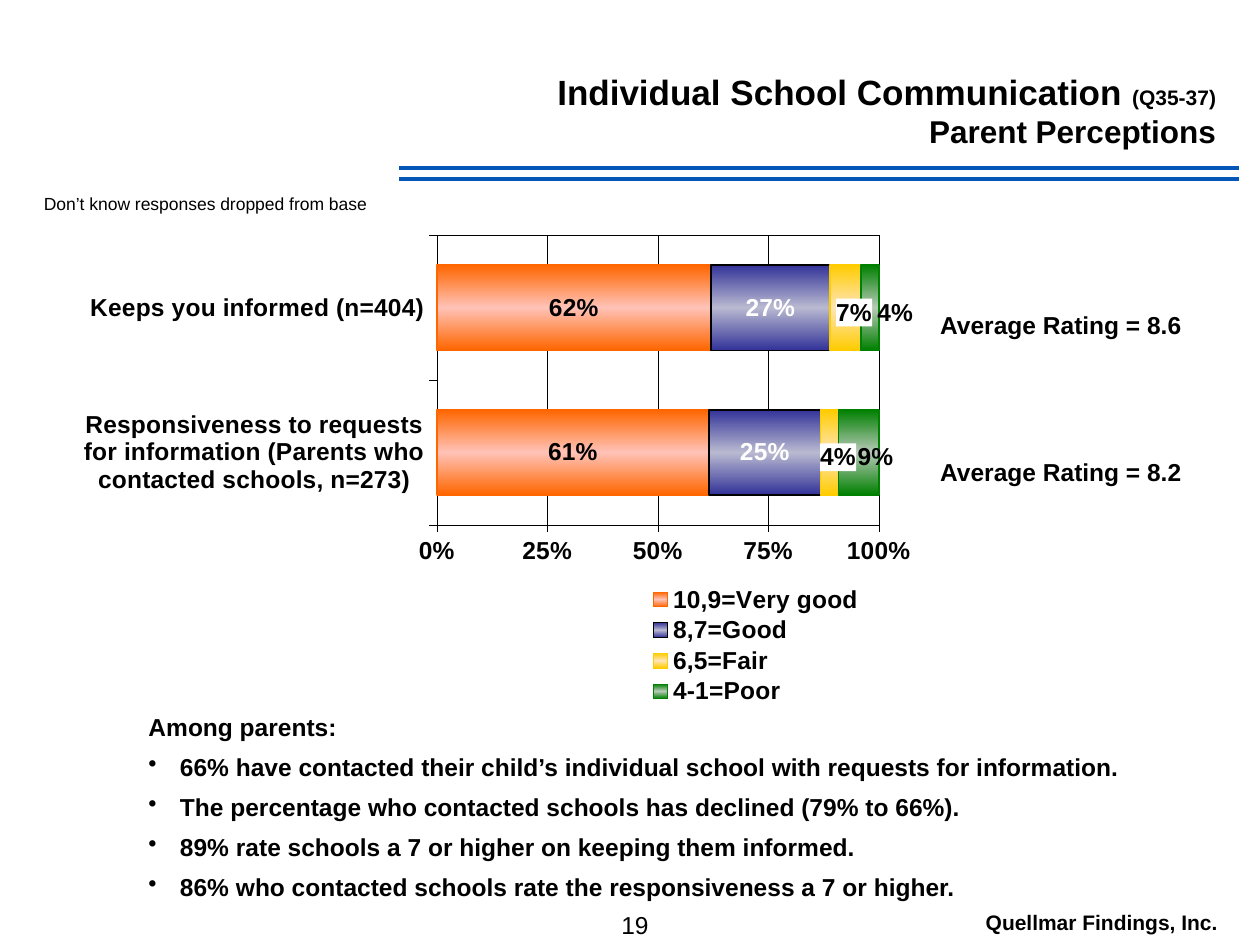
from lxml.etree import SubElement as Sub
from pptx import Presentation
from pptx.chart.data import CategoryChartData as Data
from pptx.dml.color import RGBColor as RGB
from pptx.enum.chart import XL_CHART_TYPE as Kind, XL_LEGEND_POSITION as Spot
from pptx.enum.chart import XL_TICK_MARK as Tick
from pptx.enum.shapes import MSO_CONNECTOR as Link
from pptx.enum.text import MSO_ANCHOR as Anchor, PP_ALIGN as Align
from pptx.oxml import parse_xml
from pptx.oxml.ns import nsdecls, qn
from pptx.util import Inches, Pt

# Content
TITLE = [[("Individual School Communication ", "head"), ("(Q35-37)", "small")],
         [("Parent Perceptions", "sub")]]
NOTE = "Don’t know responses dropped from base"
CATS = ["Responsiveness to requests for information (Parents who contacted schools, n=273)",
        "Keeps you informed (n=404)"]
RATES = ["Average Rating = 8.2", "Average Rating = 8.6"]
# name, values, fill, line, label colour, label shifts by category
SERIES = [
    ("10,9=Very good", (0.61, 0.62), "FF6600", "FF6600", "000000", ()),
    ("8,7=Good", (0.25, 0.27), "333399", "000000", "FFFFFF", ()),
    ("6,5=Fair", (0.04, 0.07), "FFCC00", "FFCC00", "000000", ((0.01, 0.01), (0.01, 0.01))),
    ("4-1=Poor", (0.09, 0.04), "008000", "008000", "000000", ((0.02, 0.01), (0.03, 0.01))),
]
BOXED = "6,5=Fair"
LEAD = "Among parents:"
POINTS = [
    "66% have contacted their child’s individual school with requests for information.",
    "The percentage who contacted schools has declined (79% to 66%).",
    "89% rate schools a 7 or higher on keeping them informed.",
    "86% who contacted schools rate the responsiveness a 7 or higher.",
]
PAGE, FIRM = "19", "Quellmar Findings, Inc."

THEME = {
    "font": "Arial", "ink": "000000", "paper": "FFFFFF", "rule": "0556B7",
    "head": 20, "sub": 18, "body": 14, "small": 12, "note": 10,
}


def style(font, size="body", bold=True, color=THEME["ink"]):
    font.name, font.size, font.bold = THEME["font"], Pt(THEME[size]), bold
    font.color.rgb = RGB.from_string(color)


def write(slide, text, at, size="body", bold=True, align=Align.LEFT,
          anchor=Anchor.TOP, gap=0, hang=0, dots=False):
    """Each paragraph is a string or a list of (text, size) runs."""
    frame = slide.shapes.add_textbox(*map(Inches, at)).text_frame
    frame.word_wrap, frame.vertical_anchor = True, anchor
    for n, item in enumerate([text] if isinstance(text, str) else text):
        par = frame.add_paragraph() if n else frame.paragraphs[0]
        par.alignment = align
        if n:
            par.space_before = Pt(gap)
        if dots and n:
            props = par._p.get_or_add_pPr()
            props.set("marL", str(Inches(hang)))
            props.set("indent", str(-Inches(hang)))
            Sub(props, qn("a:buChar"), char="•")
        for words, mark in [(item, size)] if isinstance(item, str) else item:
            run = par.add_run()
            run.text = words
            style(run.font, mark, bold)


def rule(slide, top):
    line = slide.shapes.add_connector(
        Link.STRAIGHT, Inches(3.17), Inches(top), Inches(9.83), Inches(top))
    line.line.color.rgb = RGB.from_string(THEME["rule"])
    line.line.width = Pt(2.25)
    Sub(line._element.spPr, qn("a:effectLst"))


def place(x, y, w=None, h=None, inner=False):
    """Manual chart layout; without a size, x and y are shifts."""
    rows = [("layoutTarget", "inner")] if inner else []
    if w:
        rows += [("xMode", "edge"), ("yMode", "edge")]
    rows += [("x", x), ("y", y)] + ([("w", w), ("h", h)] if w else [])
    body = "".join(f'<c:{k} val="{v}"/>' for k, v in rows)
    return parse_xml(f'<c:layout {nsdecls("c")}><c:manualLayout>{body}'
                     '</c:manualLayout></c:layout>')


def plain(line=None):
    edge = (f'<a:ln w="2700"><a:solidFill><a:srgbClr val="{line}"/></a:solidFill></a:ln>'
            if line else "")
    return parse_xml(f'<c:spPr {nsdecls("c", "a")}><a:solidFill><a:srgbClr '
                     f'val="{THEME["paper"]}"/></a:solidFill>{edge}</c:spPr>')


def shade(fill, color):
    """Vertical blend, lightest in the middle."""
    fill.gradient()
    fill.gradient_angle = 270
    stops = fill._xPr.find(qn("a:gradFill")).find(qn("a:gsLst"))
    for stop in list(stops):
        stops.remove(stop)
    for pos in (0, 50000, 100000):
        tone = Sub(Sub(stops, qn("a:gs"), pos=str(pos)), qn("a:srgbClr"), val=color)
        if pos == 50000:
            Sub(tone, qn("a:tint"), val="53000")


def hair(line, width=0.21, color=THEME["ink"]):
    line.color.rgb = RGB.from_string(color)
    line.width = Pt(width)


def graph(slide, at):
    data = Data(number_format="0%")
    data.categories = CATS
    for name, vals, *_ in SERIES:
        data.add_series(name, vals)
    chart = slide.shapes.add_chart(
        Kind.BAR_STACKED_100, *map(Inches, at), data).chart
    style(chart.font)
    chart.has_title = False

    # Axes and plot area
    cat, val = chart.category_axis, chart.value_axis
    for axis in (cat, val):
        axis.major_tick_mark, axis.minor_tick_mark = Tick.OUTSIDE, Tick.NONE
        hair(axis.format.line)
    val.minimum_scale, val.maximum_scale, val.major_unit = 0, 1, 0.25
    val.has_major_gridlines = True
    hair(val.major_gridlines.format.line)
    val.tick_labels.number_format = "0%"
    val.tick_labels.number_format_is_linked = False
    area = chart._chartSpace.chart.plotArea
    for old in area.findall(qn("c:layout")):
        area.remove(old)
    area.insert(0, place(0.44, 0.01, 0.52, 0.6, inner=True))
    area.append(plain(THEME["ink"]))

    # Legend
    chart.has_legend = True
    key = chart.legend
    key.position, key.include_in_layout = Spot.BOTTOM, False
    style(key.font)
    key._element.find(qn("c:legendPos")).addnext(place(0.65, 0.73, 0.33, 0.26))

    # Bars and labels
    plot = chart.plots[0]
    plot.gap_width, plot.overlap, plot.vary_by_categories = 70, 100, False
    for bar, (name, _, fill, edge, ink, shifts) in zip(plot.series, SERIES):
        shade(bar.format.fill, fill)
        hair(bar.format.line, 0.86, edge)
        tags = bar.data_labels
        tags.show_value = True
        tags.number_format, tags.number_format_is_linked = "0%", False
        style(tags.font, color=ink)
        for n, shift in enumerate(shifts):
            style(bar.points[n].data_label.font, color=ink)
            tag = tags._element.findall(qn("c:dLbl"))[n]
            for old in tag.findall(qn("c:spPr")):
                tag.remove(old)
            tag.insert(1, place(*shift))
            if name == BOXED:
                tag.insert(2, plain())


def main():
    deck = Presentation()
    deck.slide_width, deck.slide_height = Inches(10), Inches(7.5)
    slide = deck.slides.add_slide(deck.slide_layouts[6])

    # Heading
    for top in (1.33, 1.42):
        rule(slide, top)
    write(slide, TITLE, (2.5, 0.42, 7.25, 0.91), align=Align.RIGHT, anchor=Anchor.MIDDLE)
    write(slide, NOTE, (0.25, 1.48, 3, 0.3), size="note", bold=False)

    # Chart with a rating beside each bar
    graph(slide, (0.5, 1.83, 6.75, 3.83))
    for n, text in enumerate(RATES):
        write(slide, text, (7.17, 3.58 - 1.17 * n, 2.5, 0.34), align=Align.CENTER)

    # Findings and footer
    write(slide, [LEAD] + POINTS, (1.08, 5.6, 7.92, 1.62), gap=6, hang=0.25, dots=True)
    write(slide, PAGE, (4.75, 7.17, 0.58, 0.33), bold=False, align=Align.CENTER)
    write(slide, FIRM, (7.58, 7.17, 2.33, 0.3), size="small", align=Align.CENTER)
    deck.save("out.pptx")


if __name__ == "__main__":
    main()
